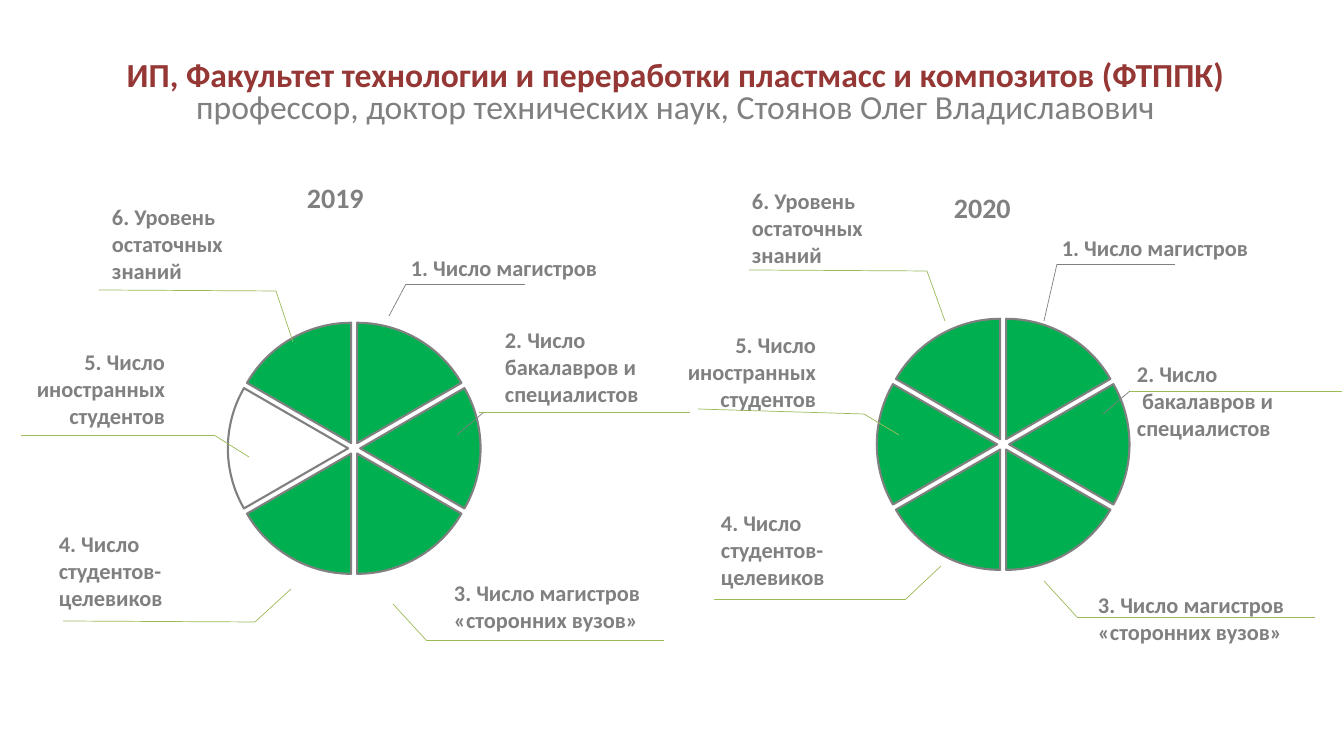
from lxml.etree import SubElement
from pptx import Presentation
from pptx.chart.data import CategoryChartData
from pptx.dml.color import RGBColor
from pptx.enum.chart import XL_CHART_TYPE
from pptx.enum.shapes import MSO_CONNECTOR
from pptx.enum.text import MSO_ANCHOR, PP_ALIGN
from pptx.oxml import parse_xml
from pptx.oxml.ns import nsdecls, qn
from pptx.util import Emu, Pt

FONT = "Calibri"
GRAY, GREEN, LEAF, PALE, RED = "808080", "00B050", "9BBB59", "C3D69B", "FF0000"
WHITE, MAROON = "FFFFFF", "953735"

LABELS = [
    "1. Число магистров",
    "2. Число\nбакалавров и специалистов",
    "3. Число магистров «сторонних вузов»",
    "4. Число студентов-целевиков",
    "5. Число иностранных студентов",
    "6. Уровень остаточных знаний",
]
LABELS_2020 = [text.replace("\n", "\n ") for text in LABELS]

# Label boxes are left, top, width, height; leaders are a colour and its corner points.
YEAR_2019 = {
    "year": ("2019", (300, 176, 77, 44)),
    "pie": (144, 271, 407, 381),
    "slices": [GREEN] * 4 + [WHITE] + [GREEN] * 3 + [RED] + [PALE] * 3,
    "labels": LABELS,
    "boxes": [(404, 250, 260, 34), (498, 322, 177, 47), (447, 575, 241, 35),
              (52, 526, 199, 108), (-47, 344, 219, 90), (105, 199, 186, 31)],
    "leaders": [
        (GRAY, [(389, 316), (406, 284), (525, 284)]),
        (GRAY, [(457, 435), (484, 412)]),
        (LEAF, [(479, 412), (690, 412)]),
        (LEAF, [(393, 604), (426, 640), (664, 640)]),
        (LEAF, [(291, 589), (255, 622), (63, 621)]),
        (LEAF, [(249, 457), (214, 435), (21, 435)]),
        (LEAF, [(293, 342), (276, 291), (99, 290)]),
    ],
}
YEAR_2020 = {
    "year": ("2020", (947, 187, 82, 43)),
    "pie": (793, 268, 407, 379),
    "slices": [GREEN] * 12,
    "labels": LABELS_2020,
    "boxes": [(1055, 230, 260, 34), (1130, 356, 263, 47), (1091, 587, 241, 34),
              (714, 505, 199, 28), (604, 327, 219, 36), (745, 183, 186, 31)],
    "leaders": [
        (GRAY, [(1044, 321), (1057, 264), (1175, 264)]),
        (GRAY, [(1103, 414), (1130, 391)]),
        (LEAF, [(1130, 391), (1342, 391)]),
        (LEAF, [(1044, 581), (1077, 617), (1315, 617)]),
        (LEAF, [(941, 566), (906, 599), (714, 599)]),
        (LEAF, [(899, 435), (864, 414), (698, 409)]),
        (LEAF, [(945, 321), (927, 271), (749, 270)]),
    ],
}


def px(length):
    return Emu(round(length * 914400 / 100.8))


def color(hex_code):
    return RGBColor.from_string(hex_code)


def add_label(slide, text, box, size, align=PP_ALIGN.LEFT):
    frame = slide.shapes.add_textbox(*map(px, box)).text_frame
    frame.word_wrap = True
    frame.margin_left = frame.margin_right = px(7)
    frame.margin_top = frame.margin_bottom = px(4)
    frame.text = text
    for paragraph in frame.paragraphs:
        paragraph.alignment = align
        paragraph.font.name = FONT
        paragraph.font.size = Pt(size)
        paragraph.font.bold = True
        paragraph.font.color.rgb = color(GRAY)


def add_leader(slide, line_color, points):
    """Join consecutive points with thin straight lines."""
    for start, end in zip(points, points[1:]):
        line = slide.shapes.add_connector(
            MSO_CONNECTOR.STRAIGHT, *map(px, start + end))
        line.line.color.rgb = color(line_color)
        line.line.width = Pt(0.5)
        SubElement(line.element.spPr, qn("a:effectLst"))


def add_pie(slide, box, slice_colors):
    """Draw six equal, slightly separated slices out of twelve categories."""
    data = CategoryChartData()
    data.categories = [str(number) for number in range(1, 13)]
    data.add_series("Series 1", [17] * 6 + [None] * 6)
    chart = slide.shapes.add_chart(
        XL_CHART_TYPE.PIE, *map(px, box), data).chart
    chart.has_legend = False
    chart.has_title = False
    chart.font.name = FONT
    chart.font.size = Pt(10)
    chart.font.color.rgb = color("000000")
    plot = chart.plots[0]
    plot.vary_by_categories = True
    series = plot.series[0]
    for index, slice_color in enumerate(slice_colors):
        style = series.points[index].format
        style.fill.solid()
        style.fill.fore_color.rgb = color(slice_color)
        style.line.color.rgb = color(GRAY)
        style.line.width = Pt(1.5)
    explosion = parse_xml(f'<c:explosion {nsdecls("c")} val="5"/>')
    series._element.find(qn("c:dPt")).addprevious(explosion)

    plot_area = chart._chartSpace.chart.plotArea
    for layout in plot_area.findall(qn("c:layout")):
        plot_area.remove(layout)
    layout = parse_xml(f'<c:layout {nsdecls("c")}><c:manualLayout/></c:layout>')
    settings = {"layoutTarget": "inner", "xMode": "edge", "yMode": "edge",
                "x": "0.206", "y": "0", "w": "0.621", "h": "0.931"}
    for name, value in settings.items():
        SubElement(layout[0], qn(f"c:{name}"), val=value)
    plot_area.insert(0, layout)


def add_year(slide, year):
    add_label(slide, *year["year"], 20)
    add_pie(slide, year["pie"], year["slices"])
    for line_color, points in year["leaders"]:
        add_leader(slide, line_color, points)
    for text, box in zip(year["labels"], year["boxes"]):
        align = PP_ALIGN.RIGHT if text.startswith("5") else PP_ALIGN.LEFT
        add_label(slide, text, box, 16, align)


def add_heading(slide, faculty, head):
    frame = slide.shapes.add_textbox(*map(px, (40, 45, 1271, 86))).text_frame
    frame.word_wrap = True
    frame.vertical_anchor = MSO_ANCHOR.BOTTOM
    paragraph = frame.paragraphs[0]
    paragraph.alignment = PP_ALIGN.CENTER
    paragraph.line_spacing = 0.8
    paragraph.space_after = Pt(6)
    paragraph.font.name = FONT
    paragraph.font.size = Pt(24)
    faculty_run = paragraph.add_run()
    paragraph.add_line_break()
    head_run = paragraph.add_run()
    for run, text, text_color, bold in [(faculty_run, faculty, MAROON, True),
                                        (head_run, head, GRAY, False)]:
        run.text = text
        run.font.color.rgb = color(text_color)
        run.font.bold = bold


def main():
    presentation = Presentation()
    presentation.slide_width = px(1344)
    presentation.slide_height = px(756)
    slide = presentation.slides.add_slide(presentation.slide_layouts[6])
    for year in (YEAR_2019, YEAR_2020):
        add_year(slide, year)
    add_heading(slide,
                "ИП, Факультет технологии и переработки пластмасс и композитов (ФТППК)",
                "профессор, доктор технических наук, Стоянов Олег Владиславович")
    presentation.save("out.pptx")


if __name__ == "__main__":
    main()
